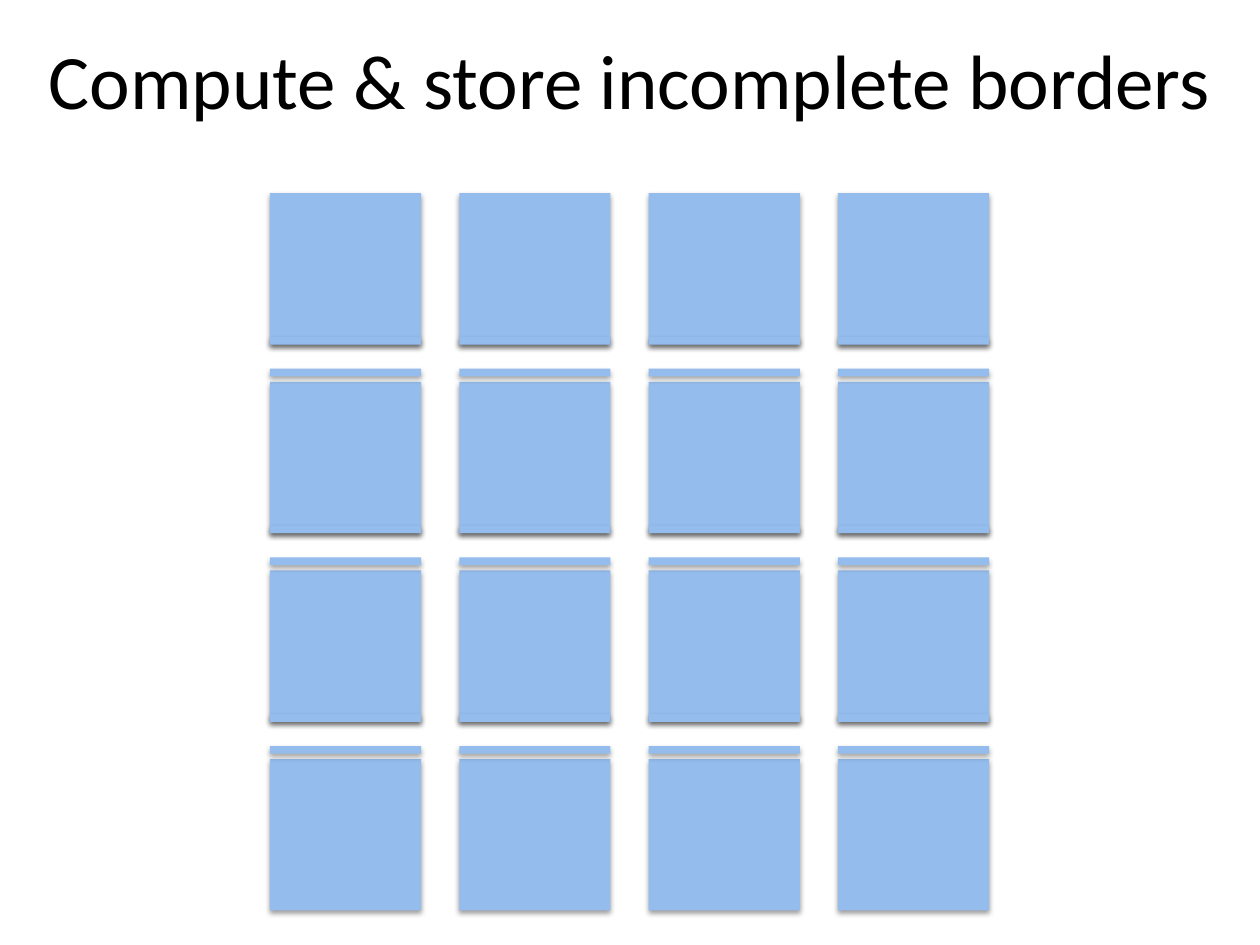
import dataclasses
import itertools

import lxml.etree
import pptx
import pptx.dml.color
import pptx.enum.shapes
import pptx.enum.text
import pptx.oxml.ns
import pptx.util

Pt = pptx.util.Pt
BLUE = "94BCEC"
BLACK = "000000"

# Grid of tile centres, in points
FIRST_X, FIRST_Y = 197.4, 153.6
STEP_X, STEP_Y = 108.2, 107.8
COLUMNS = 4
TILE_SIDE = 86.4
BORDER_THICKNESS = 4.4


@dataclasses.dataclass
class Shadow:
    opacity: int
    blur: float
    distance: float


@dataclasses.dataclass
class BlockGrid:
    first_y: float
    rows: int
    width: float
    shadow: Shadow


TILE_SHADOW = Shadow(opacity=38, blur=3.1, distance=1.6)
BORDER_SHADOW = Shadow(opacity=35, blur=3.1, distance=1.8)

TILES = BlockGrid(FIRST_Y, 4, TILE_SIDE, TILE_SHADOW)
BOTTOM_BORDERS = BlockGrid(194.7, 3, BORDER_THICKNESS, BORDER_SHADOW)
TOP_BORDERS = BlockGrid(212.9, 3, BORDER_THICKNESS, BORDER_SHADOW)


def color(value: str) -> pptx.dml.color.RGBColor:
    return pptx.dml.color.RGBColor.from_string(value)


def write_text(box, text: str, *, size: float, font: str, fill: str,
               align=pptx.enum.text.PP_ALIGN.CENTER,
               anchor=pptx.enum.text.MSO_ANCHOR.MIDDLE) -> None:
    frame = box.text_frame
    frame.word_wrap = True
    frame.vertical_anchor = anchor
    para = frame.paragraphs[0]
    para.alignment = align
    span = para.add_run()
    span.text = text
    span.font.size = Pt(size)
    span.font.name = font
    span.font.color.rgb = color(fill)


def add_shadow(box, shadow: Shadow) -> None:
    """Cast a soft shadow straight down."""
    box.shadow.inherit = False
    qn = pptx.oxml.ns.qn
    effects = box._element.spPr.find(qn("a:effectLst"))
    outer = lxml.etree.SubElement(
        effects, qn("a:outerShdw"), blurRad=str(Pt(shadow.blur)),
        dist=str(Pt(shadow.distance)), dir="5400000", rotWithShape="0")
    tint = lxml.etree.SubElement(outer, qn("a:srgbClr"), val=BLACK)
    lxml.etree.SubElement(tint, qn("a:alpha"), val=str(shadow.opacity * 1000))


def draw_grid(page, grid: BlockGrid) -> None:
    """Draw rows of blocks, each turned a quarter about its centre."""
    group = page.shapes.add_group_shape()
    for row, column in itertools.product(range(grid.rows), range(COLUMNS)):
        center_x = FIRST_X + column * STEP_X
        center_y = grid.first_y + row * STEP_Y
        box = group.shapes.add_shape(
            pptx.enum.shapes.MSO_SHAPE.RECTANGLE,
            Pt(center_x - grid.width / 2), Pt(center_y - TILE_SIDE / 2),
            Pt(grid.width), Pt(TILE_SIDE))
        box.rotation = 90
        box.fill.solid()
        box.fill.fore_color.rgb = color(BLUE)
        box.line.fill.background()
        add_shadow(box, grid.shadow)


def main() -> None:
    deck = pptx.Presentation()
    deck.slide_width, deck.slide_height = Pt(720), Pt(540)
    page = deck.slides.add_slide(deck.slide_layouts.get_by_name("Title Only"))

    # Title
    title = page.shapes.title
    title.left, title.top, title.width, title.height = Pt(0), Pt(0), Pt(720), Pt(90)
    write_text(title, "Compute & store incomplete borders",
               size=44, font="Calibri", fill=BLACK)

    # Tiles and their stored borders
    for grid in (TILES, BOTTOM_BORDERS, TOP_BORDERS):
        draw_grid(page, grid)

    deck.save("out.pptx")


if __name__ == "__main__":
    main()
